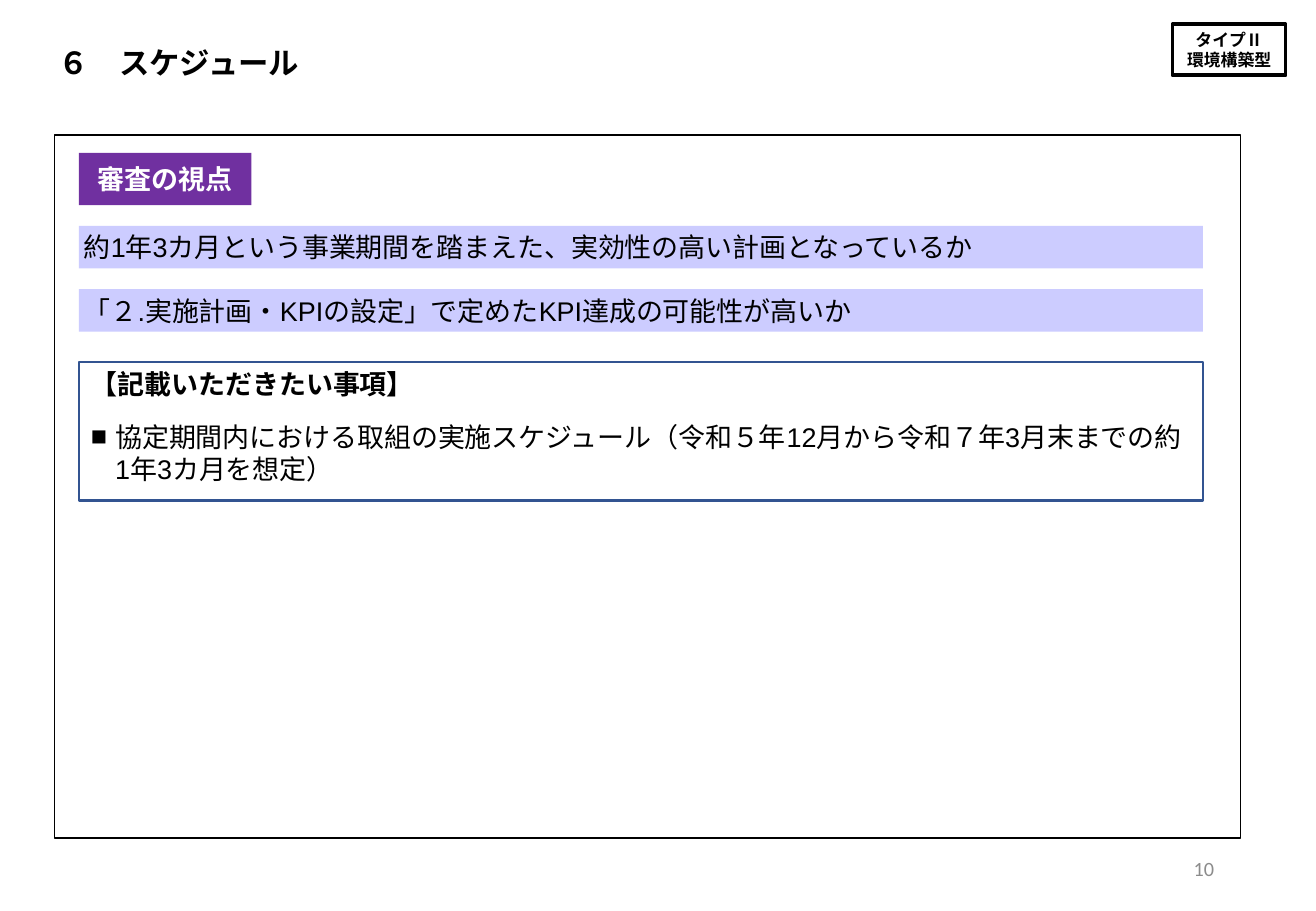
from lxml.etree import SubElement
from pptx import Presentation
from pptx.dml.color import RGBColor
from pptx.enum.shapes import MSO_SHAPE as Shape
from pptx.enum.text import MSO_ANCHOR as Anchor, MSO_AUTO_SIZE as Fit, PP_ALIGN as Align
from pptx.oxml.ns import qn
from pptx.util import Inches, Pt

WIDE, HIGH = 10.83, 7.5
PAD = 0.2
BAR = 9.25
BLACK, WHITE, PURPLE, LILAC = "000000", "FFFFFF", "7030A0", "CCCCFF"
BLUE, GRAY = "325491", "8C8C8C"
POINTS = [
    "約1年3カ月という事業期間を踏まえた、実効性の高い計画となっているか",
    "「２.実施計画・KPIの設定」で定めたKPI達成の可能性が高いか",
]
HEADING = "【記載いただきたい事項】"
ITEM = "協定期間内における取組の実施スケジュール（令和５年12月から令和７年3月末までの約1年3カ月を想定）"


def paint(color):
    return RGBColor.from_string(color)


def place(shape, box):
    shape.left, shape.top, shape.width, shape.height = map(Inches, box)


def write(shape, lines, size, color=BLACK, bold=False, align=Align.LEFT,
          font="Arial", inset=0.04, anchor=Anchor.MIDDLE):
    frame = shape.text_frame
    frame.text = "\n".join(lines)
    frame.word_wrap = True
    frame.auto_size = Fit.NONE
    frame.vertical_anchor = anchor
    frame.margin_left = frame.margin_right = Inches(inset)
    frame.margin_top = frame.margin_bottom = Inches(min(inset, 0.05))
    for par in frame.paragraphs:
        par.alignment = align
        par.font.name, par.font.size, par.font.bold = font, Pt(size), bold
        par.font.color.rgb = paint(color)
    return frame


def panel(slide, box, fill=None, line=None, weight=1):
    """Add a rectangle with an optional fill and outline."""
    shape = slide.shapes.add_shape(Shape.RECTANGLE, *map(Inches, box))
    shape.shadow.inherit = False
    if fill:
        shape.fill.solid()
        shape.fill.fore_color.rgb = paint(fill)
    else:
        shape.fill.background()
    if line:
        shape.line.color.rgb = paint(line)
        shape.line.width = Pt(weight)
    else:
        shape.line.fill.background()
    return shape


def bullet(par, mark, indent):
    props = par._p.get_or_add_pPr()
    props.set("marL", str(Inches(indent)))
    props.set("indent", str(-Inches(indent)))
    SubElement(props, qn("a:buFont"), typeface="Arial")
    SubElement(props, qn("a:buChar"), char=mark)


def header(slide):
    title = slide.shapes.title
    place(title, (0.44, 0.32, 4.05, 0.38))
    write(title, ["６　スケジュール"], 18, bold=True, font="Calibri")
    badge = panel(slide, (WIDE - 1.18, 0.2, 0.93, 0.42), line=BLACK, weight=2.25)
    write(badge, ["タイプⅡ", "環境構築型"], 10, bold=True, align=Align.CENTER)


def request(slide, box):
    """Add the outlined box that lists what applicants should describe."""
    shape = panel(slide, box, WHITE, BLUE, 1.5)
    frame = write(shape, [HEADING, ITEM], 16, inset=0.1, anchor=Anchor.TOP)
    head, item = frame.paragraphs
    head.font.bold = True
    head.space_before = item.space_before = Pt(12)
    bullet(item, "■", 0.2)


def review(slide, box):
    """Add the framed review area with its label, points and request."""
    left, top = box[:2]
    panel(slide, box, WHITE, BLACK)
    left += PAD
    label = panel(slide, (left, top + 0.15, 1.42, 0.43), PURPLE)
    write(label, ["審査の視点"], 16, WHITE, True, Align.CENTER)
    for row, point in enumerate(POINTS):
        bar = panel(slide, (left, top + 0.75 + row * 0.52, BAR, 0.35), LILAC)
        write(bar, [point], 16)
    request(slide, (left, top + 1.87, BAR, 1.14))


def footer(slide):
    number = slide.shapes.add_textbox(*map(Inches, (7.65, HIGH - 0.55, 2.44, 0.4)))
    write(number, ["10"], 12, GRAY, align=Align.RIGHT, font="Calibri", inset=0.1)


def main():
    deck = Presentation()
    deck.slide_width, deck.slide_height = Inches(WIDE), Inches(HIGH)
    slide = deck.slides.add_slide(deck.slide_layouts.get_by_name("Title Only"))
    header(slide)
    review(slide, (0.45, 1.11, 9.76, 5.79))
    footer(slide)
    deck.save("out.pptx")


if __name__ == "__main__":
    main()
